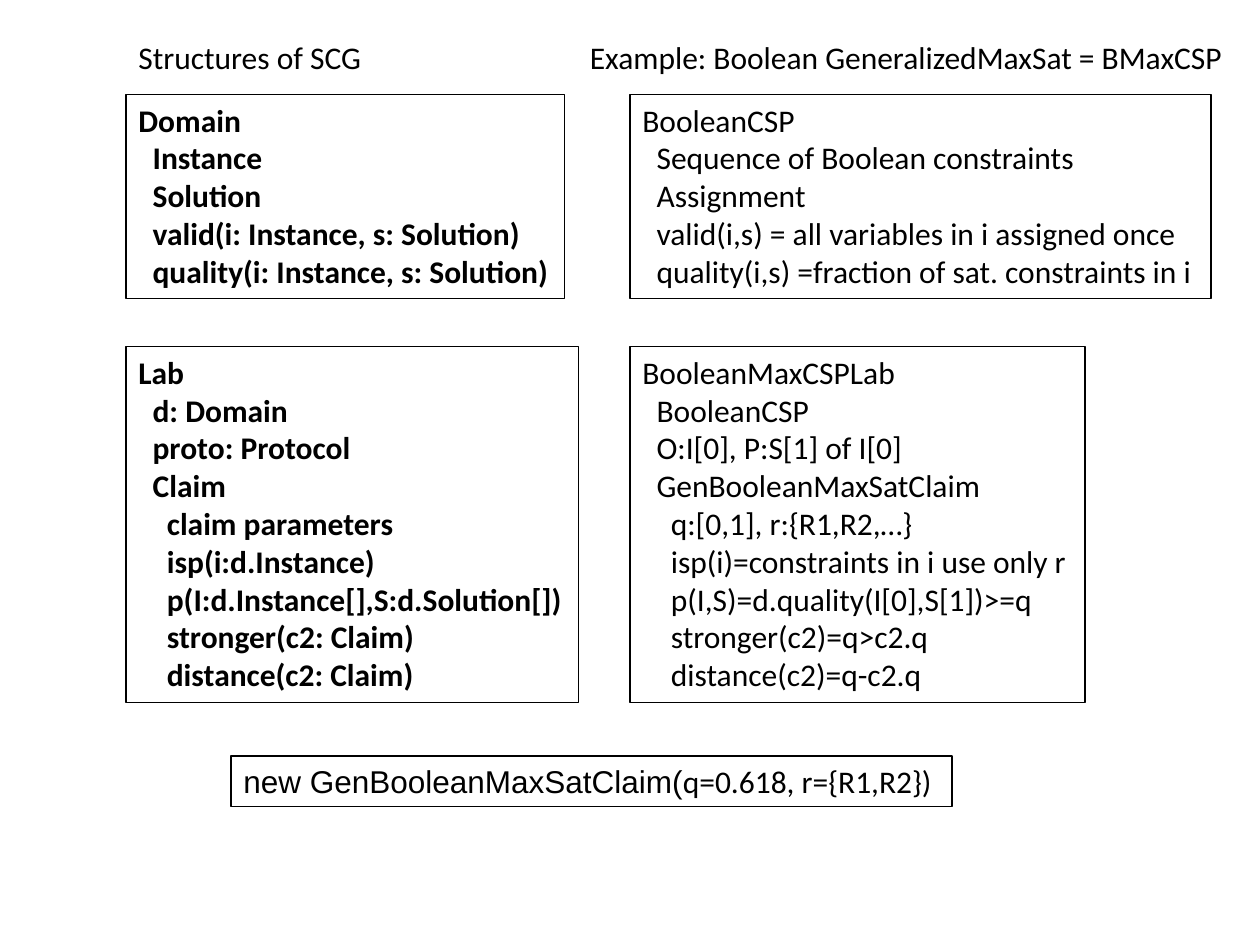
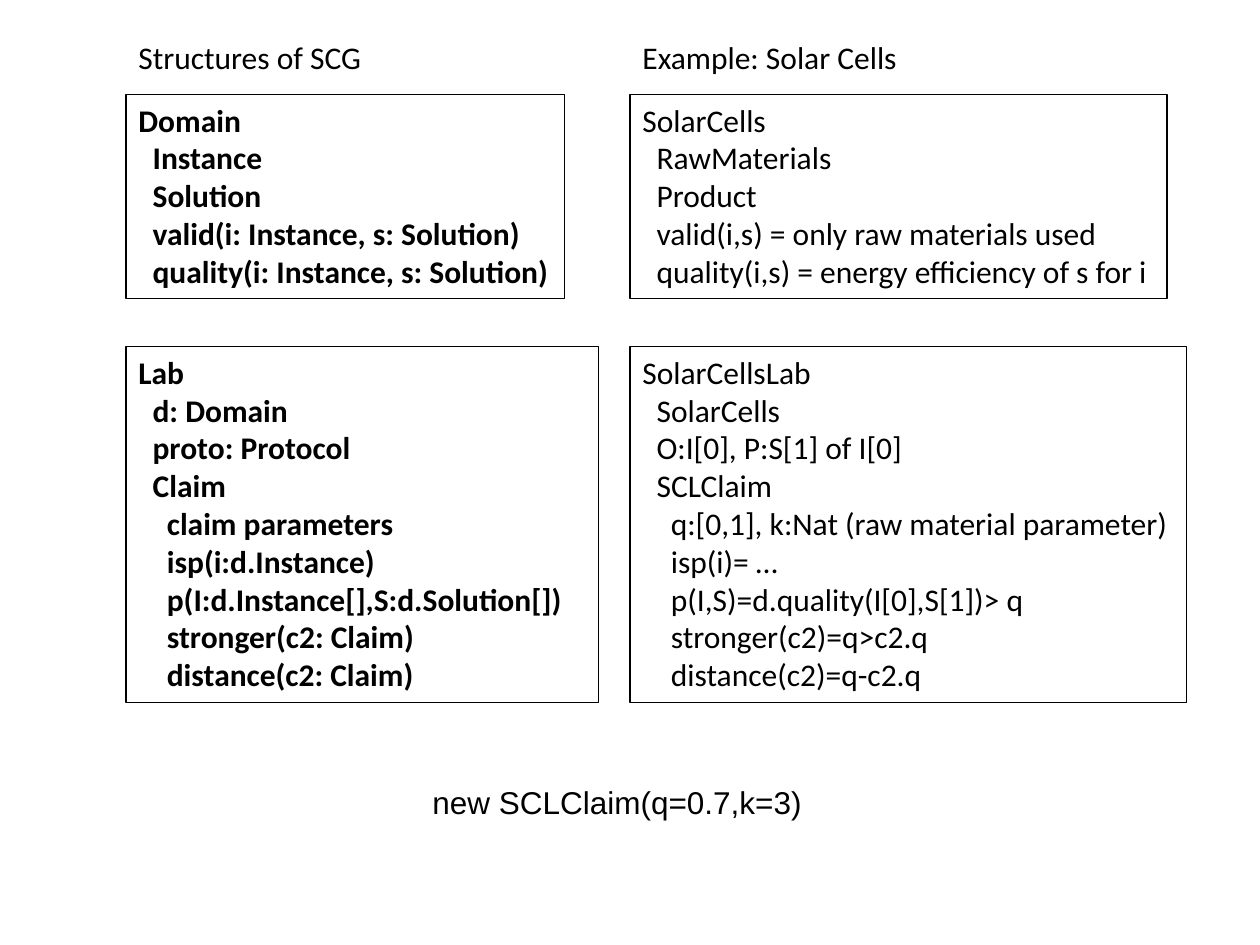
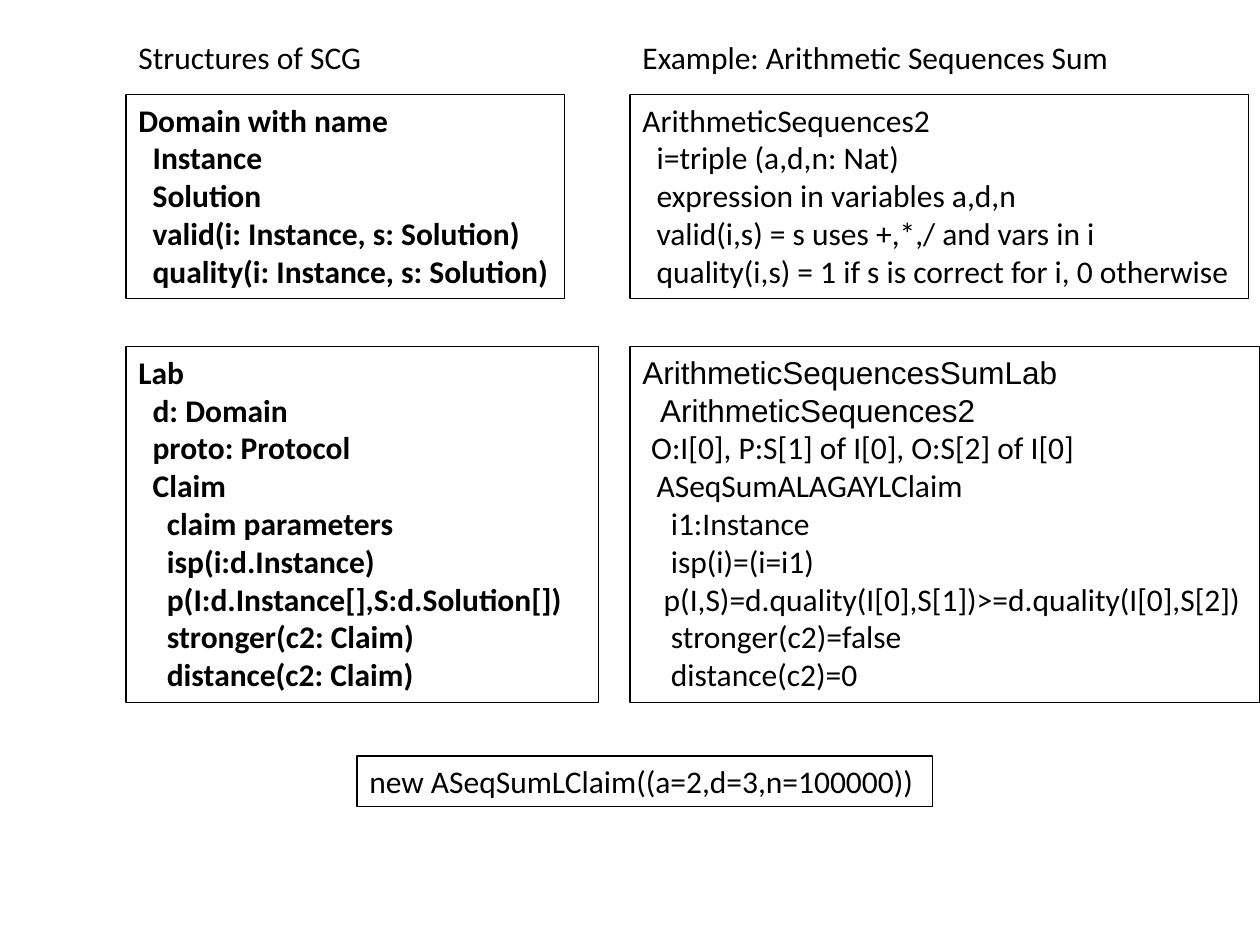
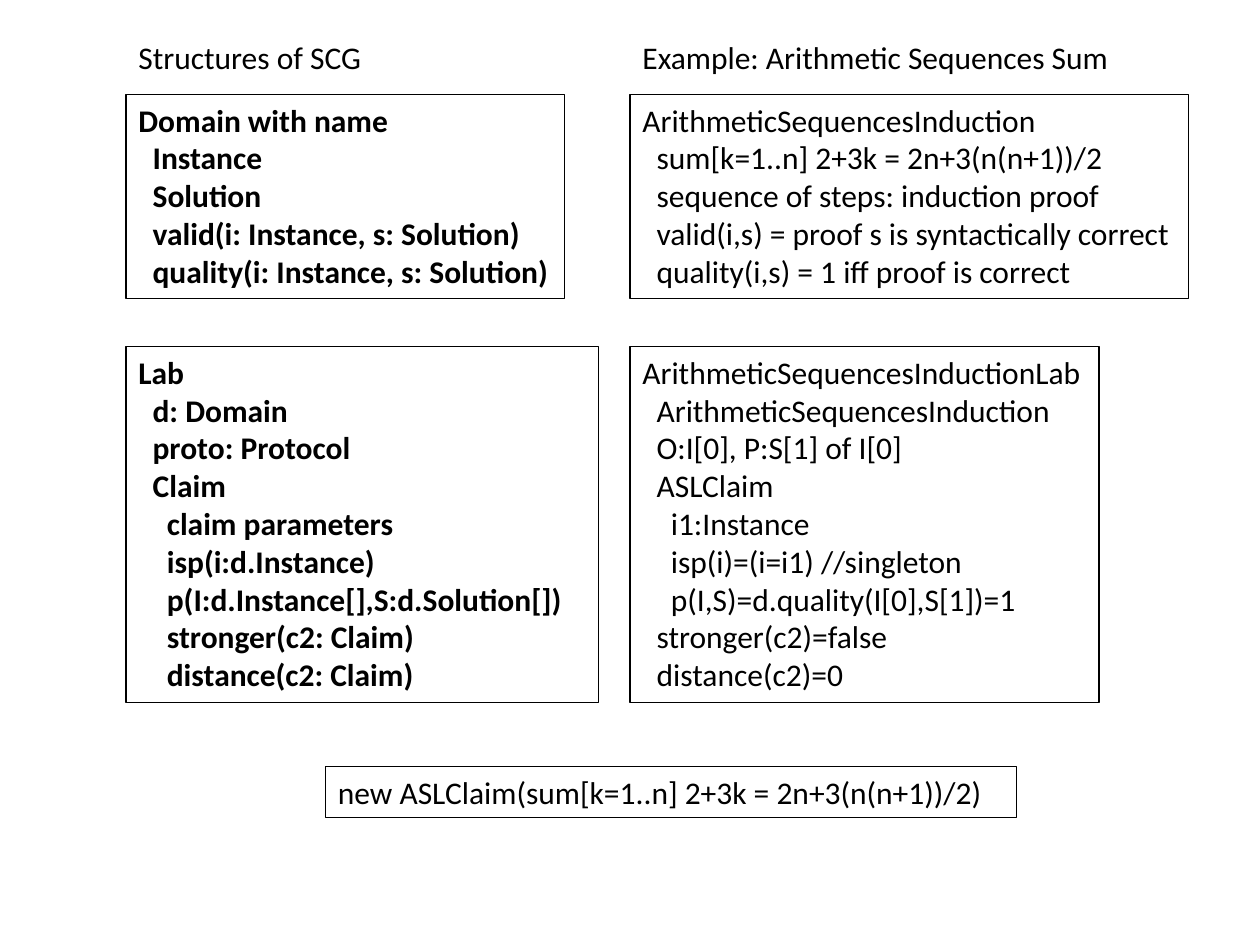
from pptx import Presentation
from pptx.dml.color import RGBColor
from pptx.enum.shapes import MSO_SHAPE
from pptx.enum.text import MSO_ANCHOR, MSO_AUTO_SIZE, PP_ALIGN
from pptx.util import Pt

RECTANGLE = MSO_SHAPE.RECTANGLE
TOP = MSO_ANCHOR.TOP
LEFT = PP_ALIGN.LEFT
GROW = MSO_AUTO_SIZE.SHAPE_TO_FIT_TEXT

INK = "000000"
BODY_FONT, CODE_FONT = "Calibri", "Arial"
TEXT_SIZE = 18
INDENT_STEP = 4.07
STRUCTURE_LEFT, EXAMPLE_LEFT = 72, 360
HEADING_TOP, DOMAIN_TOP, LAB_TOP = 18, 54, 198
LINE_HEIGHT, DOMAIN_HEIGHT, LAB_HEIGHT = 29, 116.5, 203.5
DOMAIN_DEPTHS = (0, 2, 2, 2, 2)
LAB_DEPTHS = (0, 2, 2, 2, 4, 4, 4, 4, 4)

DOMAIN_MEMBERS = ["Instance", "Solution", "valid(i: Instance, s: Solution)",
                  "quality(i: Instance, s: Solution)"]
LAB_MEMBERS = ["Lab", "d: Domain", "proto: Protocol", "Claim", "claim parameters",
               "isp(i:d.Instance)", "p(I:d.Instance[],S:d.Solution[])",
               "stronger(c2: Claim)", "distance(c2: Claim)"]


def color(value):
    """Turn a hex string into a colour."""
    return RGBColor.from_string(value)


def code(text):
    """Make a line of one run in the code font."""
    return [(text, CODE_FONT)]


class Deck:
    """Holds the style and the slide being built."""

    def __init__(self):
        """Start an empty presentation."""
        self.presentation = Presentation()
        self.presentation.slide_width = Pt(720)
        self.presentation.slide_height = Pt(540)
        self.slide = None

    def new_slide(self):
        """Add a blank slide and make it current."""
        self.slide = self.presentation.slides.add_slide(self.presentation.slide_layouts[6])

    def add_lines(self, holder, lines, depths, bold):
        """Fill a shape with indented lines, run by run."""
        frame = holder.text_frame
        frame.word_wrap = True
        frame.auto_size = GROW
        frame.vertical_anchor = TOP
        for number, (line, depth) in enumerate(zip(lines, depths)):
            paragraph = frame.add_paragraph() if number else frame.paragraphs[0]
            paragraph.alignment = LEFT
            if depth:
                paragraph._p.get_or_add_pPr().set("marL", str(Pt(depth * INDENT_STEP)))
            runs = [(line, BODY_FONT)] if isinstance(line, str) else line
            for text, font_name in runs:
                run = paragraph.add_run()
                run.text = text
                run.font.name = font_name
                run.font.size = Pt(TEXT_SIZE)
                run.font.bold = bold
                run.font.color.rgb = color(INK)

    def label(self, left, top, width, line):
        """Add one line of text without a frame."""
        holder = self.slide.shapes.add_textbox(Pt(left), Pt(top), Pt(width), Pt(LINE_HEIGHT))
        self.add_lines(holder, [line], (0,), False)

    def box(self, left, top, width, height, lines, depths=(0,), bold=False):
        """Add a framed block of lines."""
        frame = self.slide.shapes.add_shape(RECTANGLE, Pt(left), Pt(top), Pt(width), Pt(height))
        frame.shadow.inherit = False
        frame.fill.background()
        frame.line.color.rgb = color(INK)
        frame.line.width = Pt(0.75)
        self.add_lines(frame, lines, depths, bold)

    def structures(self, domain_title, lab_width=270):
        """Add the general structures on the left."""
        self.label(STRUCTURE_LEFT, HEADING_TOP, 143.5, "Structures of SCG")
        self.box(STRUCTURE_LEFT, DOMAIN_TOP, 250.5, DOMAIN_HEIGHT,
                 [domain_title] + DOMAIN_MEMBERS, DOMAIN_DEPTHS, True)
        self.box(STRUCTURE_LEFT, LAB_TOP, lab_width, LAB_HEIGHT, LAB_MEMBERS, LAB_DEPTHS, True)

    def example(self, heading, heading_width, domain, domain_width, lab, lab_width,
                heading_left=EXAMPLE_LEFT, lab_depths=LAB_DEPTHS):
        """Add the matching example on the right."""
        self.label(heading_left, HEADING_TOP, heading_width, heading)
        self.box(EXAMPLE_LEFT, DOMAIN_TOP, domain_width, DOMAIN_HEIGHT, domain, DOMAIN_DEPTHS)
        self.box(EXAMPLE_LEFT, LAB_TOP, lab_width, LAB_HEIGHT, lab, lab_depths)

    def claim(self, left, top, width, line):
        """Add the framed claim below the structures."""
        self.box(left, top, width, LINE_HEIGHT, [line])


def boolean_slide(deck):
    """Build the Boolean satisfaction example."""
    deck.new_slide()
    deck.structures("Domain", lab_width=258.5)
    deck.example(
        "Example: Boolean GeneralizedMaxSat = BMaxCSP", 380,
        ["BooleanCSP", "Sequence of Boolean constraints", "Assignment",
         "valid(i,s) = all variables in i assigned once",
         "quality(i,s) =fraction of sat. constraints in i"], 332,
        ["BooleanMaxCSPLab", "BooleanCSP", "O:I[0], P:S[1] of I[0]", "GenBooleanMaxSatClaim",
         "q:[0,1], r:{R1,R2,…}", "isp(i)=constraints in i use only r",
         "p(I,S)=d.quality(I[0],S[1])>=q", "stronger(c2)=q>c2.q", "distance(c2)=q-c2.q"], 260,
        heading_left=330)
    deck.claim(132, 432, 412, code("new GenBooleanMaxSatClaim(")
               + [("q=0.618, r={R1,R2})", BODY_FONT)])


def solar_slide(deck):
    """Build the solar cells example."""
    deck.new_slide()
    deck.structures("Domain")
    deck.example(
        "Example: Solar Cells", 161.5,
        ["SolarCells", "RawMaterials", "Product", "valid(i,s) = only raw materials used",
         "quality(i,s) = energy efficiency of s for i"], 307,
        ["SolarCellsLab", "SolarCells", "O:I[0], P:S[1] of I[0]", "SCLClaim",
         "q:[0,1], k:Nat (raw material parameter)", "isp(i)= …",
         "p(I,S)=d.quality(I[0],S[1])> q", "stronger(c2)=q>c2.q", "distance(c2)=q-c2.q"], 318)
    deck.label(240, 444, 227.5, code("new SCLClaim(q=0.7,k=3)"))


def sum_slide(deck):
    """Build the arithmetic sum example."""
    deck.new_slide()
    deck.structures("Domain with name")
    deck.example(
        "Example: Arithmetic Sequences Sum", 283.5,
        ["ArithmeticSequences2", "i=triple (a,d,n: Nat)", "expression in variables a,d,n",
         "valid(i,s) = s uses +,*,/ and vars in i",
         "quality(i,s) = 1 if s is correct for i, 0 otherwise"], 353.5,
        [code("ArithmeticSequencesSumLab"), code("ArithmeticSequences2"),
         "O:I[0], P:S[1] of I[0], O:S[2] of I[0]", "ASeqSumALAGAYLClaim", "i1:Instance",
         "isp(i)=(i=i1)", "p(I,S)=d.quality(I[0],S[1])>=d.quality(I[0],S[2])",
         "stronger(c2)=false", "distance(c2)=0"], 360,
        lab_depths=(0, 2.5, 1.25, 2, 4, 4, 3, 4, 4))
    deck.claim(204, 432, 329, "new ASeqSumLClaim((a=2,d=3,n=100000))")


def induction_slide(deck):
    """Build the induction proof example."""
    deck.new_slide()
    deck.structures("Domain with name")
    deck.example(
        "Example: Arithmetic Sequences Sum", 283.5,
        ["ArithmeticSequencesInduction", "sum[k=1..n] 2+3k = 2n+3(n(n+1))/2",
         "sequence of steps: induction proof", "valid(i,s) = proof s is syntactically correct",
         "quality(i,s) = 1 iff proof is correct"], 319,
        ["ArithmeticSequencesInductionLab", "ArithmeticSequencesInduction",
         "O:I[0], P:S[1] of I[0]", "ASLClaim", "i1:Instance", "isp(i)=(i=i1) //singleton",
         "p(I,S)=d.quality(I[0],S[1])=1", "stronger(c2)=false", "distance(c2)=0"], 268,
        lab_depths=(0, 2, 2, 2, 4, 4, 4, 2, 2))
    deck.claim(186, 438, 395, "new ASLClaim(sum[k=1..n] 2+3k = 2n+3(n(n+1))/2)")


def main():
    """Build every slide and save the deck."""
    deck = Deck()
    for build in (boolean_slide, solar_slide, sum_slide, induction_slide):
        build(deck)
    deck.presentation.save("out.pptx")


if __name__ == "__main__":
    main()
